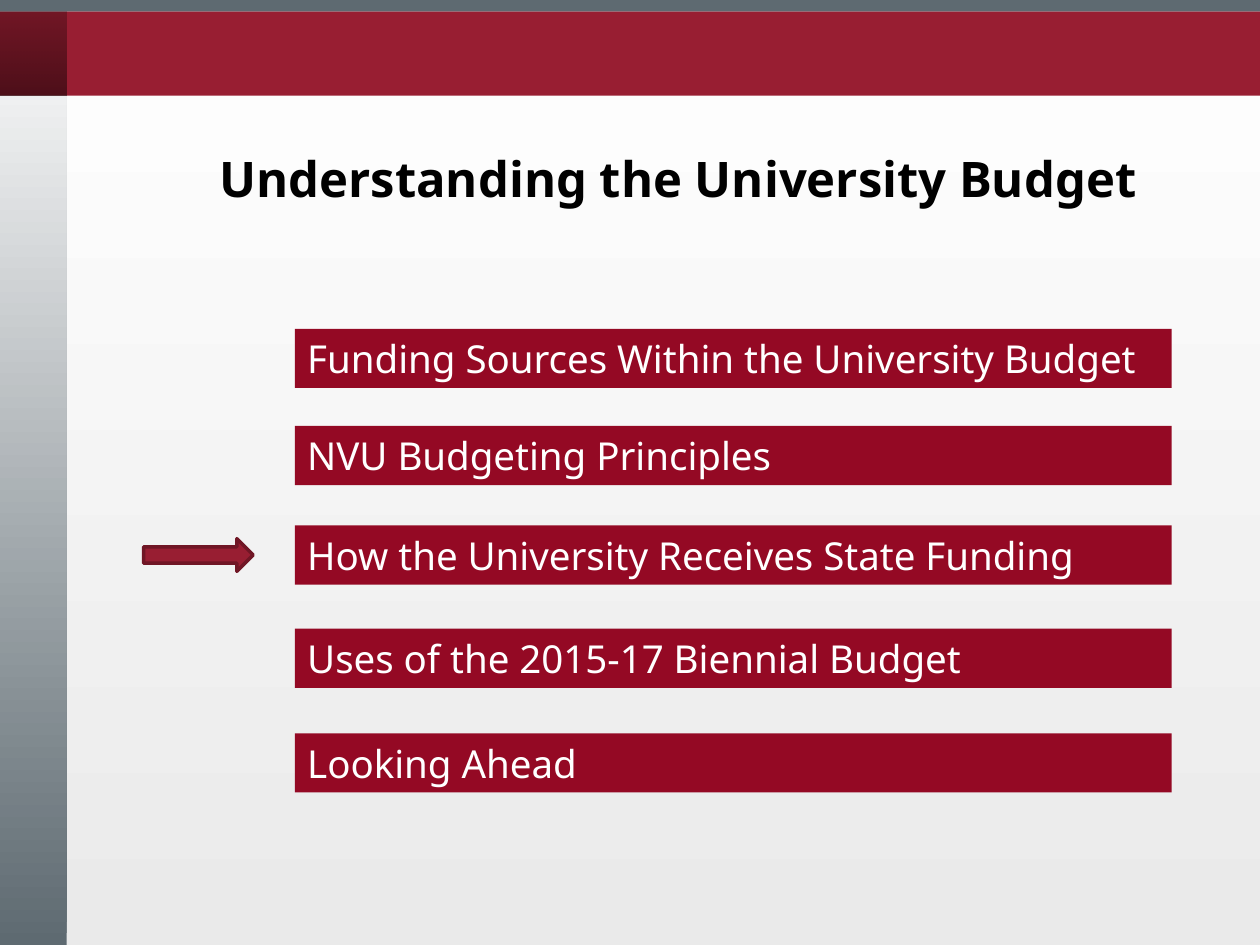
from pptx import Presentation
from pptx.dml.color import RGBColor
from pptx.enum.shapes import MSO_SHAPE
from pptx.enum.text import MSO_ANCHOR, MSO_AUTO_SIZE, PP_ALIGN
from pptx.oxml.ns import qn
from pptx.util import Inches, Pt
from lxml.etree import SubElement

CRIMSON = RGBColor(0x98, 0x1E, 0x32)
DARK_CRIMSON = RGBColor(0x70, 0x16, 0x25)
BAR_RED = RGBColor(0x94, 0x09, 0x24)
SLATE = RGBColor(0x5E, 0x6A, 0x71)
PALE_GRAY = RGBColor(0xEA, 0xEA, 0xEA)
WHITE = RGBColor(0xFF, 0xFF, 0xFF)
BLACK = RGBColor(0x00, 0x00, 0x00)
FONT = "Noto Sans"

# Agenda topics with their offsets from the top of the list
TOPICS = [
    ("Funding Sources Within the University Budget", 0),
    ("NVU Budgeting Principles", 0.77),
    ("How the University Receives State Funding", 1.56),
    ("Uses of the 2015-17 Biennial Budget", 2.38),
    ("Looking Ahead", 3.21),
]
CURRENT_TOPIC = 2


def fill_upward(fill, bottom, top, opacities=None):
    """Apply a gradient from bottom to top, with optional opacity percentages."""
    fill.gradient()
    fill.gradient_angle = 90
    for stop, color in zip(fill.gradient_stops, (bottom, top)):
        stop.color.rgb = color
    if opacities:
        colors = fill._xPr.iter(qn("a:srgbClr"))
        for color, opacity in zip(colors, opacities):
            SubElement(color, qn("a:alpha"), val=str(opacity * 1000))


def add_block(slide, left, top, width, height, color=None, kind=MSO_SHAPE.RECTANGLE):
    shape = slide.shapes.add_shape(
        kind, Inches(left), Inches(top), Inches(width), Inches(height))
    shape.shadow.inherit = False
    shape.line.fill.background()
    if color is not None:
        shape.fill.solid()
        shape.fill.fore_color.rgb = color
    return shape


def write_text(shape, text, size, color, bold=False, align=PP_ALIGN.LEFT,
               anchor=MSO_ANCHOR.MIDDLE, line_spacing=1.0, side_inset=0.1):
    frame = shape.text_frame
    frame.word_wrap = True
    frame.auto_size = MSO_AUTO_SIZE.NONE
    frame.vertical_anchor = anchor
    frame.margin_left = frame.margin_right = Inches(side_inset)
    frame.margin_top = frame.margin_bottom = Inches(0.05)
    paragraph = frame.paragraphs[0]
    paragraph.alignment = align
    paragraph.line_spacing = line_spacing
    run = paragraph.add_run()
    run.text = text
    run.font.name = FONT
    run.font.size = Pt(size)
    run.font.bold = bold
    run.font.color.rgb = color


def add_frame(slide, width, height):
    """Draw the background, side strip and header bands."""
    strip_width, rule_height, band_height = 0.53, 0.09, 0.67
    fill_upward(slide.background.fill, PALE_GRAY, WHITE)
    strip = add_block(slide, 0, 0, strip_width, height)
    fill_upward(strip.fill, SLATE, WHITE)
    add_block(slide, 0, rule_height, width, band_height, CRIMSON)
    corner = add_block(slide, 0, rule_height, strip_width, band_height)
    fill_upward(corner.fill, BLACK, BLACK, opacities=(50, 25))
    add_block(slide, 0, 0, width, rule_height, SLATE)


def add_title(slide, left, top, width, height):
    title = slide.shapes.title
    title.left, title.top = Inches(left), Inches(top)
    title.width, title.height = Inches(width), Inches(height)
    write_text(title, "Understanding the University Budget", 28, BLACK, bold=True,
               align=PP_ALIGN.CENTER, anchor=MSO_ANCHOR.TOP,
               line_spacing=0.9, side_inset=0.5)


def add_agenda(slide, left, top, width, bar_height):
    for topic, offset in TOPICS:
        bar = add_block(slide, left, top + offset, width, bar_height, BAR_RED)
        write_text(bar, topic, 22, WHITE)

    arrow_height = 0.26
    current_top = top + TOPICS[CURRENT_TOPIC][1]
    arrow = add_block(slide, left - 1.2, current_top + (bar_height - arrow_height) / 2,
                      0.87, arrow_height, CRIMSON, MSO_SHAPE.RIGHT_ARROW)
    arrow.line.color.rgb = DARK_CRIMSON
    arrow.line.width = Pt(2)


def main():
    presentation = Presentation()
    width, height = 10, 7.5
    presentation.slide_width = Inches(width)
    presentation.slide_height = Inches(height)
    slide = presentation.slides.add_slide(presentation.slide_layouts[5])
    add_frame(slide, width, height)
    add_title(slide, 1.02, 1.18, 8.72, 1.07)
    add_agenda(slide, 2.34, 2.61, 6.96, 0.47)
    presentation.save("out.pptx")


if __name__ == "__main__":
    main()
